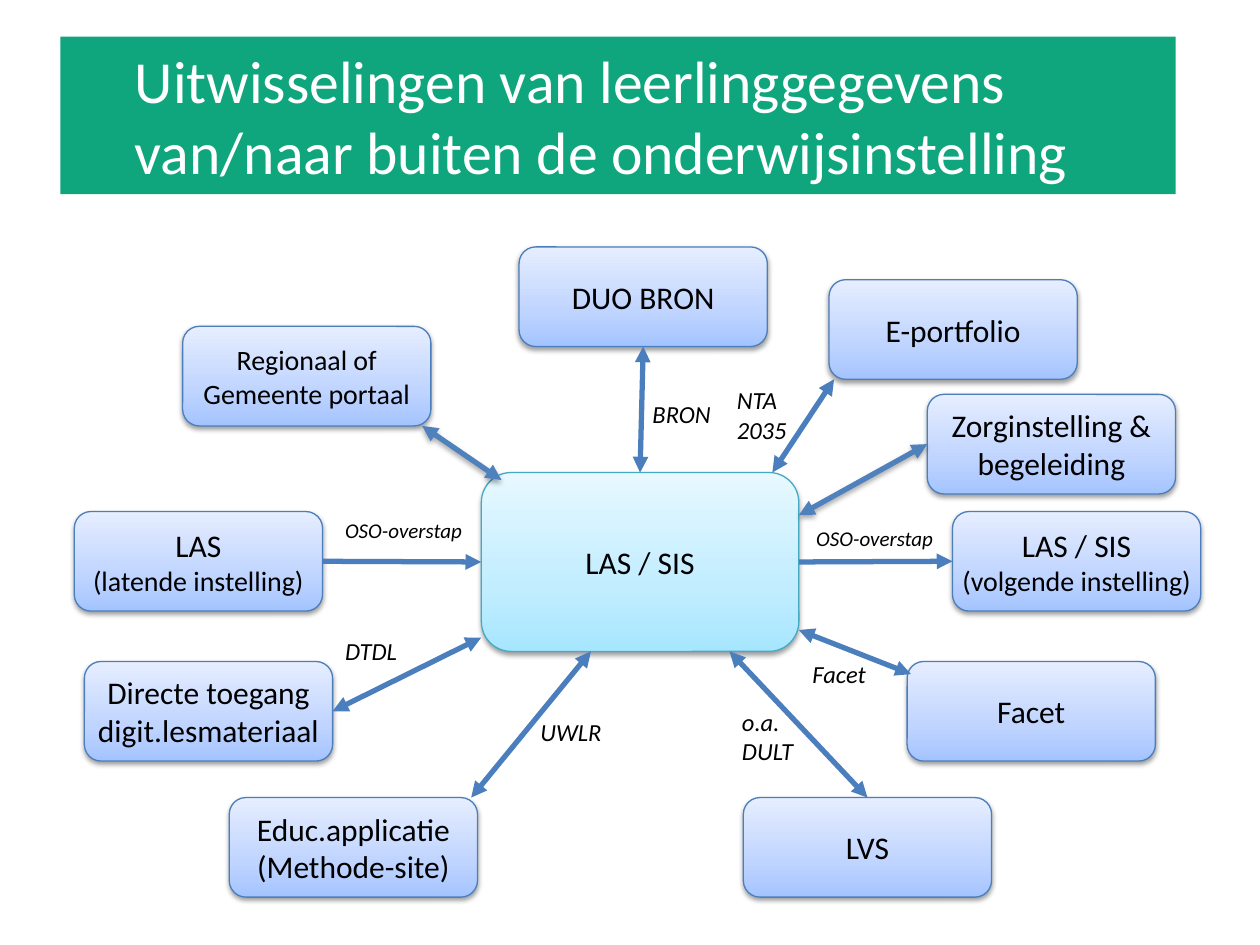
from copy import deepcopy

from lxml.etree import SubElement as Sub
from pptx import Presentation
from pptx.dml.color import RGBColor
from pptx.enum.shapes import MSO_CONNECTOR as Conn, MSO_SHAPE as Shape
from pptx.enum.text import MSO_ANCHOR as Anchor, MSO_AUTO_SIZE as Fit, PP_ALIGN as Align
from pptx.oxml.ns import qn
from pptx.util import Inches, Pt

FONT = "Calibri"
BLACK = RGBColor(0x00, 0x00, 0x00)
WHITE = RGBColor(0xFF, 0xFF, 0xFF)
GREEN = RGBColor(0x0F, 0xA6, 0x7E)
BLUE = RGBColor(0x4B, 0x7E, 0xBC)
SOFT = RGBColor(0x4F, 0x81, 0xBD)
TEAL = RGBColor(0x46, 0xAA, 0xC5)
AQUA = [RGBColor(0xA7, 0xE6, 0xFF), RGBColor(0xC1, 0xED, 0xFF), RGBColor(0xE7, 0xF8, 0xFF)]
SKY = [RGBColor(0xA4, 0xC4, 0xFF), RGBColor(0xBF, 0xD4, 0xFF), RGBColor(0xE6, 0xEE, 0xFF)]
STOPS = [0, 0.35, 1]

BOX = (1.97, 0.79)
CORE = (3.82, 3.75, 2.52, 1.42)
TOP, LEFT, BOTTOM, RIGHT = range(4)

# name: left, top, side inset, lines of (text, size)
PARTIES = {
    "duo": (4.12, 1.96, 0.1, [("DUO BRON", 18)]),
    "next": (7.56, 4.06, 0, [("LAS / SIS", 18), ("(volgende instelling)", 16)]),
    "lvs": (5.9, 6.33, 0.1, [("LVS", 18)]),
    "last": (0.59, 4.06, 0, [("LAS", 18), ("(latende instelling)", 16)]),
    "folio": (6.58, 2.22, 0.1, [("E-portfolio", 18)]),
    "facet": (7.2, 5.25, 0.1, [("Facet", 18)]),
    "direct": (0.67, 5.25, 0, [("Directe toegang digit.lesmateriaal", 18)]),
    "care": (7.36, 3.13, 0, [("Zorginstelling & begeleiding", 18)]),
    "region": (1.45, 2.59, 0, [("Regionaal of Gemeente portaal", 16)]),
    "app": (1.82, 6.33, 0, [("Educ.applicatie (Methode-site)", 18)]),
}

# Each end is a point (x, y) or a joined side (name, side); then: two-way, shaded
LINKS = [
    (("core", TOP), ("duo", BOTTOM), True, False),
    (("core", RIGHT), ("next", LEFT), False, False),
    ((5.79, 5.17), ("lvs", TOP), True, False),
    (("last", RIGHT), ("core", LEFT), False, False),
    ((7.23, 5.35), (6.34, 5), True, False),
    ((3.82, 5.06), ("direct", RIGHT), True, False),
    ((6.34, 4.09), ("care", LEFT), True, True),
    ((3.35, 3.38), (3.98, 3.81), True, True),
    ((4.69, 5.17), (3.74, 6.33), True, False),
    ((6.13, 3.75), (6.62, 3.01), True, False),
]

# left, top, width, height, size, lines
LABELS = [
    (5.08, 3.12, 0.67, 0.34, 14, ["BRON"]),
    (2.64, 4.06, 1.18, 0.34, 12, ["OSO-overstap"]),
    (6.38, 4.12, 1.14, 0.3, 12, ["OSO-overstap"]),
    (5.79, 5.56, 0.61, 0.57, 14, ["o.a.", "DULT"]),
    (2.64, 5, 0.62, 0.34, 14, ["DTDL"]),
    (5.75, 3.01, 0.6, 0.57, 14, ["NTA", "2035"]),
    (6.35, 5.18, 0.63, 0.34, 14, ["Facet"]),
    (4.19, 5.64, 0.69, 0.34, 14, ["UWLR"]),
]


def add_run(para, text, size, color=BLACK, italic=False):
    run = para.add_run()
    run.text = text
    font = run.font
    font.name, font.size, font.italic = FONT, Pt(size), italic
    font.color.rgb = color


def add_shade(effects, alpha, dist):
    """Put a soft drop shadow in an empty a:effectLst."""
    shade = Sub(effects, qn("a:outerShdw"), blurRad=str(Pt(3.1)), dist=str(Pt(dist)),
                dir="5400000", rotWithShape="0")
    color = Sub(shade, qn("a:srgbClr"), val=str(BLACK))
    Sub(color, qn("a:alpha"), val=str(alpha * 1000))


def fill_fade(shape, colors):
    """Fill from bottom to top through three colours."""
    fill = shape.fill
    fill.gradient()
    fill.gradient_angle = 90
    stops = shape._element.spPr.find(".//" + qn("a:gsLst"))
    stops.insert(1, deepcopy(stops[0]))
    for stop, color, place in zip(fill.gradient_stops, colors, STOPS):
        stop.color.rgb = color
        stop.position = place


def add_box(slide, place, lines, inset=0.1, colors=SKY, edge=BLUE):
    box = slide.shapes.add_shape(Shape.ROUNDED_RECTANGLE, *map(Inches, place))
    fill_fade(box, colors)
    box.line.color.rgb = edge
    box.line.width = Pt(0.75)
    box.shadow.inherit = False
    add_shade(box._element.spPr.find(qn("a:effectLst")), 38, 1.6)
    frame = box.text_frame
    frame.word_wrap = True
    frame.vertical_anchor = Anchor.MIDDLE
    frame.margin_left = frame.margin_right = Inches(inset)
    para = frame.paragraphs[0]
    para.alignment = Align.CENTER
    for i, (text, size) in enumerate(lines):
        if i:
            para.add_line_break()
        add_run(para, text, size)
    return box


def add_link(slide, boxes, start, end, both, shaded):
    ends = [(0, 0) if isinstance(e[0], str) else e for e in (start, end)]
    link = slide.shapes.add_connector(Conn.STRAIGHT, *(Inches(v) for e in ends for v in e))
    for spot, join in ((start, link.begin_connect), (end, link.end_connect)):
        if isinstance(spot[0], str):
            join(boxes[spot[0]], spot[1])
    link.line.color.rgb = SOFT if shaded else BLUE
    link.line.width = Pt(3)
    props = link._element.spPr
    stroke = props.find(qn("a:ln"))
    for tag in ["a:headEnd"] * both + ["a:tailEnd"]:
        Sub(stroke, qn(tag), type="triangle")
    effects = Sub(props, qn("a:effectLst"))
    if shaded:
        add_shade(effects, 35, 1.8)


def add_label(slide, left, top, width, height, size, lines):
    label = slide.shapes.add_textbox(*map(Inches, (left, top, width, height)))
    frame = label.text_frame
    frame.word_wrap = False
    frame.auto_size = Fit.SHAPE_TO_FIT_TEXT
    for i, text in enumerate(lines):
        para = frame.add_paragraph() if i else frame.paragraphs[0]
        add_run(para, text, size, italic=True)


def set_title(slide, text):
    title = slide.shapes.title
    title.left, title.top, title.width, title.height = map(Inches, (0.48, 0.29, 8.85, 1.25))
    title.fill.solid()
    title.fill.fore_color.rgb = GREEN
    frame = title.text_frame
    frame.word_wrap = True
    frame.auto_size = Fit.NONE
    frame.vertical_anchor = Anchor.MIDDLE
    para = frame.paragraphs[0]
    para.alignment = Align.LEFT
    para._p.get_or_add_pPr().set("marL", str(Inches(0.49)))
    add_run(para, text, 34.1, WHITE)


def main():
    deck = Presentation()
    deck.slide_width, deck.slide_height = Inches(10), Inches(7.5)
    slide = deck.slides.add_slide(deck.slide_layouts[5])
    set_title(slide, "Uitwisselingen van leerlinggegevens van/naar buiten de onderwijsinstelling")
    boxes = {"core": add_box(slide, CORE, [("LAS / SIS", 18)], colors=AQUA, edge=TEAL)}
    for name, (left, top, inset, lines) in PARTIES.items():
        boxes[name] = add_box(slide, (left, top, *BOX), lines, inset)
    for link in LINKS:
        add_link(slide, boxes, *link)
    for label in LABELS:
        add_label(slide, *label)
    deck.save("out.pptx")


if __name__ == "__main__":
    main()
